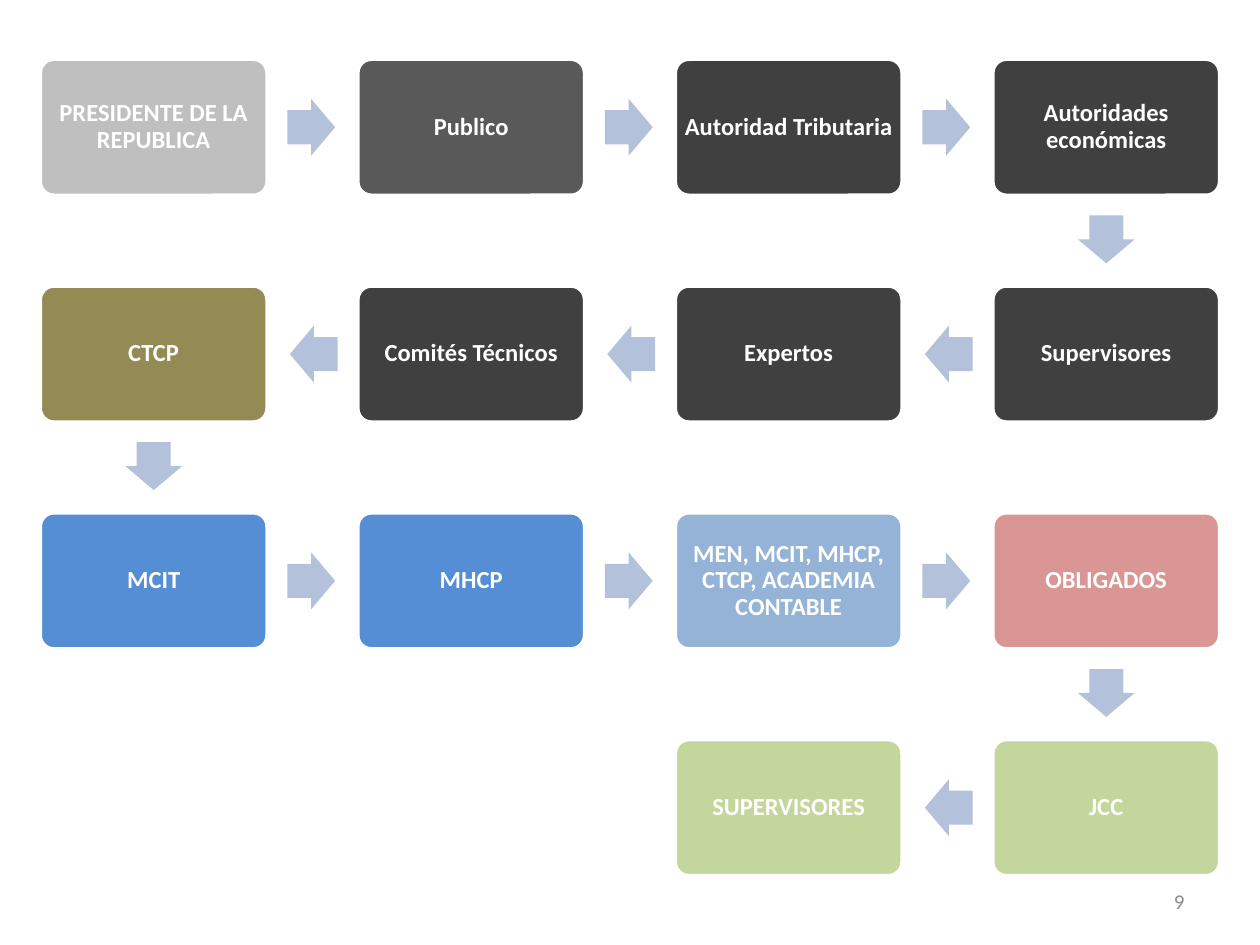
from pptx import Presentation
from pptx import util as u
from pptx.dml.color import RGBColor
from pptx.enum import shapes, text

COLORS = {
    "silver": "BFBFBF", "gray": "595959", "charcoal": "404040",
    "olive": "948A54", "blue": "558ED5", "sky": "95B3D7",
    "rose": "D99694", "green": "C3D69B",
    "arrow": "B3C1DB", "white": "FFFFFF", "number": "8C8C8C",
}

# Grid of the flow, in inches
LEFT, TOP = 0.32, 0.47
COLUMN, ROW = 2.52, 1.8
STEP_WIDTH, STEP_HEIGHT = 1.8, 1.08
ARROW_LENGTH, ARROW_WIDTH = 0.38, 0.45
ARROW_SHIFT = 0.01  # arrows sit slightly nearer the step they leave

# Steps in reading order of the flow: column, row, label, colour
STEPS = [
    (0, 0, "PRESIDENTE DE LA REPUBLICA", "silver"),
    (1, 0, "Publico", "gray"),
    (2, 0, "Autoridad Tributaria", "charcoal"),
    (3, 0, "Autoridades económicas", "charcoal"),
    (3, 1, "Supervisores", "charcoal"),
    (2, 1, "Expertos", "charcoal"),
    (1, 1, "Comités Técnicos", "charcoal"),
    (0, 1, "CTCP", "olive"),
    (0, 2, "MCIT", "blue"),
    (1, 2, "MHCP", "blue"),
    (2, 2, "MEN, MCIT, MHCP, CTCP, ACADEMIA CONTABLE", "sky"),
    (3, 2, "OBLIGADOS", "rose"),
    (3, 3, "JCC", "green"),
    (2, 3, "SUPERVISORES", "green"),
]
ROTATIONS = {(1, 0): 0, (0, 1): 90, (-1, 0): 180}


def color(name):
    return RGBColor.from_string(COLORS[name])


def add_filled(page, kind, box, fill, adjustments):
    shape = page.shapes.add_shape(kind, *map(u.Inches, box))
    shape.shadow.inherit = False
    shape.fill.solid()
    shape.fill.fore_color.rgb = color(fill)
    for index, value in enumerate(adjustments):
        shape.adjustments[index] = value
    return shape


def write(frame, words, size, tint, align, bold=False):
    frame.word_wrap = True
    frame.vertical_anchor = text.MSO_ANCHOR.MIDDLE
    para = frame.paragraphs[0]
    para.text = words
    para.alignment = align
    para.font.name = "Calibri"
    para.font.size = u.Pt(size)
    para.font.bold = bold
    para.font.color.rgb = color(tint)
    return para


def add_step(page, box, label, fill):
    shape = add_filled(page, shapes.MSO_SHAPE.ROUNDED_RECTANGLE, box, fill, [0.1])
    shape.line.color.rgb = color("white")
    shape.line.width = u.Pt(2)
    frame = shape.text_frame
    # The rounded corners add the rest of the inset
    frame.margin_left = frame.margin_right = u.Inches(0.03)
    frame.margin_top = frame.margin_bottom = u.Inches(0.03)
    para = write(frame, label, 14, "white", text.PP_ALIGN.CENTER, bold=True)
    para.line_spacing = 0.9


def add_arrow(page, center, direction):
    box = (center[0] - ARROW_LENGTH / 2, center[1] - ARROW_WIDTH / 2,
           ARROW_LENGTH, ARROW_WIDTH)
    shape = add_filled(page, shapes.MSO_SHAPE.RIGHT_ARROW, box, "arrow", [0.6, 0.5])
    shape.line.fill.background()
    shape.rotation = ROTATIONS[direction]


def add_flow(page, left, top):
    """Snake of steps, with an arrow from each one to the next."""
    for index, (column, row, label, fill) in enumerate(STEPS):
        x, y = left + column * COLUMN, top + row * ROW
        add_step(page, (x, y, STEP_WIDTH, STEP_HEIGHT), label, fill)
        if index + 1 < len(STEPS):
            next_column, next_row = STEPS[index + 1][:2]
            across, down = next_column - column, next_row - row
            center = (x + STEP_WIDTH / 2 + across * (COLUMN / 2 - ARROW_SHIFT),
                      y + STEP_HEIGHT / 2 + down * (ROW / 2 - ARROW_SHIFT))
            add_arrow(page, center, (across, down))


def add_page_number(page, box, number):
    shape = page.shapes.add_textbox(*map(u.Inches, box))
    write(shape.text_frame, number, 12, "number", text.PP_ALIGN.RIGHT)


def main():
    deck = Presentation()
    deck.slide_width, deck.slide_height = u.Inches(10), u.Inches(7.5)
    page = deck.slides.add_slide(deck.slide_layouts[6])
    add_flow(page, LEFT, TOP)
    add_page_number(page, (7.17, 6.95, 2.33, 0.4), "9")
    deck.save("out.pptx")


if __name__ == "__main__":
    main()
